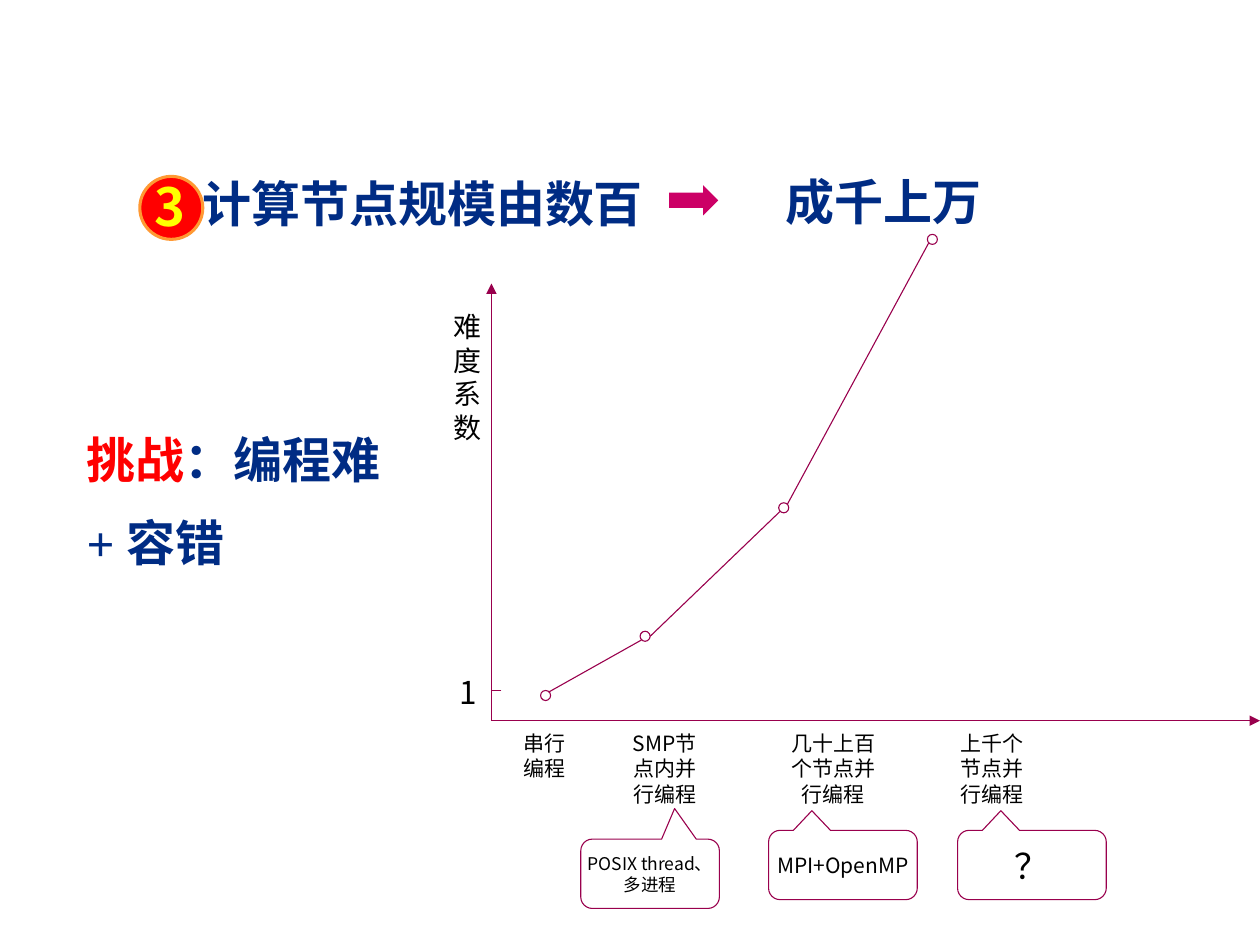
from dataclasses import dataclass
from typing import NamedTuple, Optional

from pptx import Presentation
from pptx import util as u
from pptx.dml.color import RGBColor
from pptx.enum import shapes, text
from pptx.oxml import parse_xml
from pptx.oxml.ns import nsdecls, qn


@dataclass(frozen=True)
class Theme:
    navy: str = "002C84"
    red: str = "FF0000"
    orange: str = "FF9933"
    yellow: str = "FFFF00"
    pink: str = "CC0066"
    plum: str = "99004D"
    black: str = "000000"
    serif: str = "Times New Roman"
    sans: str = "Noto Sans CJK SC"
    heading: int = 28
    badge: int = 30
    axis: int = 16
    tick: int = 18
    label: int = 12
    small: int = 10
    query: int = 20
    hairline: float = 0.63
    outline: float = 1.75


THEME = Theme()


class Box(NamedTuple):
    left: float
    top: float
    width: float
    height: float


class Point(NamedTuple):
    x: float
    y: float


class Stage(NamedTuple):
    label: str
    label_box: Box
    marker: Point


class Callout(NamedTuple):
    label: str
    box: Box
    tip: Point
    size: int


class Run(NamedTuple):
    words: str
    color: str


ORIGIN = Point(3.9, 5.72)
MARKER = 0.08
STAGES = [
    Stage("串行编程", Box(4.13, 5.8, 0.39, 0.4), Point(4.29, 5.48)),
    Stage("SMP节点内并行编程", Box(5, 5.8, 0.55, 0.61), Point(5.08, 5.01)),
    Stage("几十上百个节点并行编程", Box(6.26, 5.8, 0.71, 0.61), Point(6.18, 3.99)),
    Stage("上千个 节点并行编程", Box(7.6, 5.8, 0.55, 0.61), Point(7.36, 1.86)),
]
SEGMENTS = [
    (Point(4.36, 5.49), Point(5.09, 5.08)),
    (Point(5.16, 5.05), Point(6.19, 4.06)),
    (Point(6.25, 4), Point(7.37, 1.93)),
]
CALLOUTS = [
    Callout("POSIX thread、多进程", Box(4.61, 6.66, 1.1, 0.55),
            Point(0.177, -0.942), THEME.small),
    Callout("MPI+OpenMP", Box(6.1, 6.59, 1.18, 0.55),
            Point(-0.209, -0.784), THEME.label),
    Callout("？", Box(7.6, 6.59, 1.18, 0.55),
            Point(-0.209, -0.784), THEME.query),
]


def inches(values):
    return [u.Inches(value) for value in values]


def write(frame, paragraphs: list[list[Run]], *, size: int, font: str = THEME.sans,
          bold: bool = False, centered: bool = True, inset: bool = True,
          wrap: bool = True, shadow: bool = False) -> None:
    frame.word_wrap = wrap
    if not inset:
        frame.margin_left = frame.margin_right = 0
        frame.margin_top = frame.margin_bottom = 0
    for index, runs in enumerate(paragraphs):
        paragraph = frame.paragraphs[0] if index == 0 else frame.add_paragraph()
        paragraph.alignment = text.PP_ALIGN.CENTER if centered else text.PP_ALIGN.LEFT
        if index:
            paragraph.space_before = u.Pt(size / 2)
        for words, color in runs:
            run = paragraph.add_run()
            run.text = words
            run.font.size = u.Pt(size)
            run.font.bold = bold
            run.font.color.rgb = RGBColor.from_string(color)
            run.font.name = font
            properties = run.font._element
            properties.find(qn("a:latin")).addnext(
                parse_xml(f'<a:ea {nsdecls("a")} typeface="{THEME.sans}"/>'))
            if shadow:
                properties.find(qn("a:solidFill")).addnext(parse_xml(
                    f'<a:effectLst {nsdecls("a")}><a:outerShdw dist="35921" dir="2700000">'
                    '<a:srgbClr val="808080"/></a:outerShdw></a:effectLst>'))


def add_text(slide, box: Box, paragraphs: list[list[Run]], **style) -> None:
    frame = slide.shapes.add_textbox(*inches(box)).text_frame
    write(frame, paragraphs, **style)
    frame.auto_size = text.MSO_AUTO_SIZE.SHAPE_TO_FIT_TEXT


def add_figure(slide, kind, box: Box, *, fill: Optional[str] = None,
               line: Optional[str] = None, weight: float = THEME.hairline):
    figure = slide.shapes.add_shape(kind, *inches(box))
    figure.shadow.inherit = False
    if fill:
        figure.fill.solid()
        figure.fill.fore_color.rgb = RGBColor.from_string(fill)
    else:
        figure.fill.background()
    if line:
        figure.line.color.rgb = RGBColor.from_string(line)
        figure.line.width = u.Pt(weight)
    else:
        figure.line.fill.background()
    return figure


def add_line(slide, start: Point, end: Point, arrow: bool = False) -> None:
    line = slide.shapes.add_connector(
        shapes.MSO_CONNECTOR.STRAIGHT, *inches((*start, *end)))
    line.line.color.rgb = RGBColor.from_string(THEME.plum)
    line.line.width = u.Pt(THEME.hairline)
    properties = line._element.spPr
    if arrow:
        properties.find(qn("a:ln")).append(
            parse_xml(f'<a:tailEnd {nsdecls("a")} type="triangle"/>'))
    properties.append(parse_xml(f'<a:effectLst {nsdecls("a")}/>'))


def add_heading(slide) -> None:
    style = dict(size=THEME.heading, font=THEME.serif, bold=True)
    add_text(slide, Box(0.93, 1.33, 4.85, 0.57),
             [[Run("计算节点规模由数百", THEME.navy)]], **style)
    add_figure(slide, shapes.MSO_SHAPE.OVAL, Box(1.11, 1.4, 0.5, 0.5),
               fill=THEME.red, line=THEME.orange, weight=THEME.outline)
    add_text(slide, Box(1.13, 1.33, 0.41, 0.61), [[Run("3", THEME.yellow)]],
             size=THEME.badge, bold=True, wrap=False, shadow=True)
    add_figure(slide, shapes.MSO_SHAPE.RIGHT_ARROW, Box(5.31, 1.47, 0.39, 0.24),
               fill=THEME.pink)
    add_text(slide, Box(5.79, 1.31, 2.44, 0.57),
             [[Run("成千上万", THEME.navy)]], **style)
    add_text(slide, Box(0.59, 3.36, 2.76, 1.28),
             [[Run("挑战", THEME.red), Run("：编程难", THEME.navy)],
              [Run("+ 容错", THEME.navy)]], centered=False, **style)


def add_axes(slide) -> None:
    add_line(slide, ORIGIN, Point(10, ORIGIN.y), arrow=True)
    add_line(slide, ORIGIN, Point(ORIGIN.x, 2.25), arrow=True)
    add_line(slide, Point(3.98, 5.48), Point(ORIGIN.x, 5.48))
    add_text(slide, Box(3.5, 2.41, 0.32, 1.17),
             [[Run("难度系数", THEME.black)]], size=THEME.axis)
    add_text(slide, Box(3.62, 5.34, 0.2, 0.3),
             [[Run("1", THEME.black)]], size=THEME.tick, inset=False)


def add_curve(slide) -> None:
    for stage in STAGES:
        add_text(slide, stage.label_box, [[Run(stage.label, THEME.black)]],
                 size=THEME.label, inset=False)
        add_figure(slide, shapes.MSO_SHAPE.OVAL, Box(*stage.marker, MARKER, MARKER),
                   line=THEME.plum)
    for start, end in SEGMENTS:
        add_line(slide, start, end)


def add_callout(slide, callout: Callout) -> None:
    bubble = add_figure(slide, shapes.MSO_SHAPE.ROUNDED_RECTANGULAR_CALLOUT,
                        callout.box, line=THEME.plum)
    bubble.adjustments[0], bubble.adjustments[1] = callout.tip
    bubble.text_frame.vertical_anchor = text.MSO_ANCHOR.MIDDLE
    write(bubble.text_frame, [[Run(callout.label, THEME.black)]],
          size=callout.size, inset=False)


def main() -> None:
    deck = Presentation()
    deck.slide_width, deck.slide_height = inches((10, 7.5))
    slide = deck.slides.add_slide(deck.slide_layouts[6])
    add_heading(slide)
    add_axes(slide)
    add_curve(slide)
    for callout in CALLOUTS:
        add_callout(slide, callout)
    deck.save("out.pptx")


if __name__ == "__main__":
    main()
